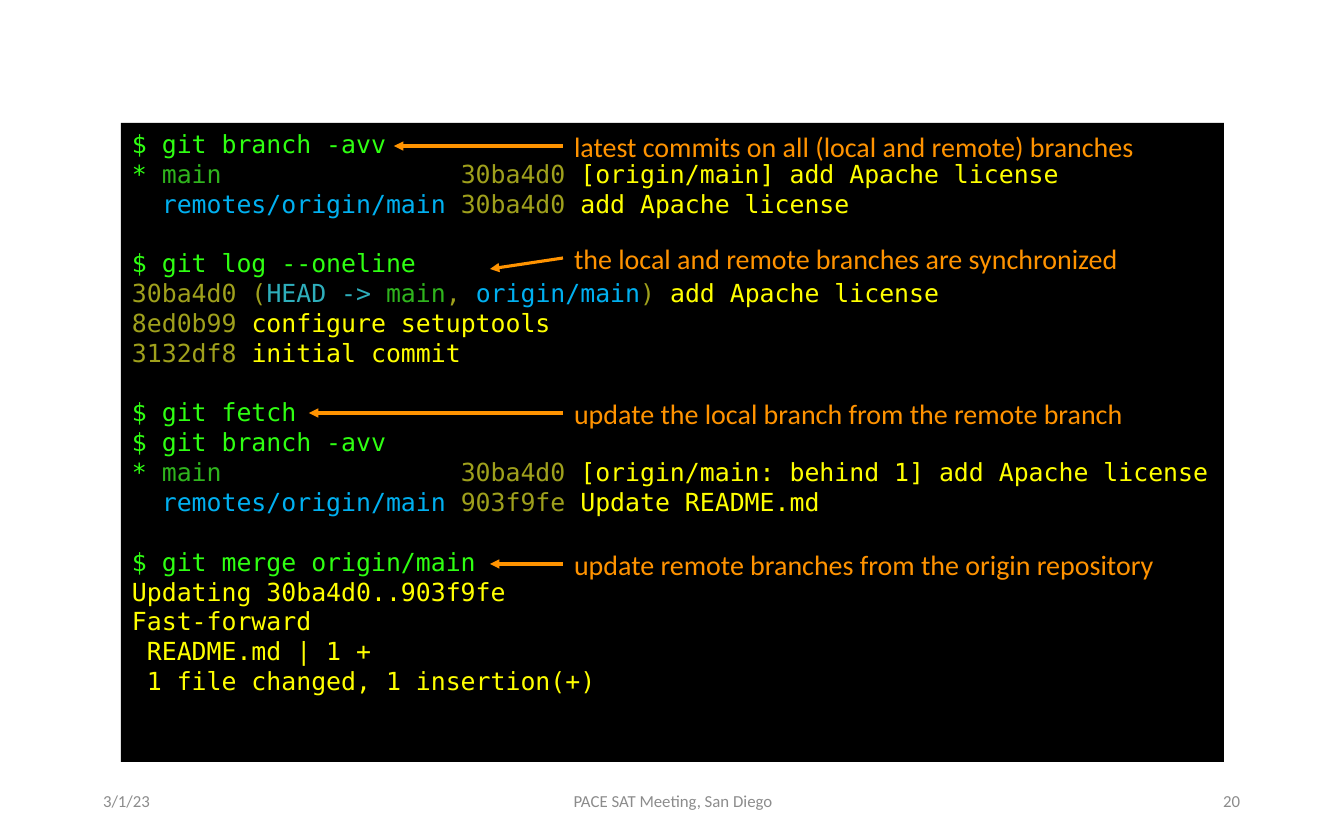
from lxml import etree
from pptx import Presentation
from pptx.dml.color import RGBColor
from pptx.enum.shapes import MSO_CONNECTOR, MSO_SHAPE
from pptx.enum.text import MSO_ANCHOR, PP_ALIGN
from pptx.oxml.ns import qn
from pptx.util import Emu, Pt

RECTANGLE = MSO_SHAPE.RECTANGLE
STRAIGHT = MSO_CONNECTOR.STRAIGHT
TOP, MIDDLE = MSO_ANCHOR.TOP, MSO_ANCHOR.MIDDLE
LEFT, CENTER, RIGHT = PP_ALIGN.LEFT, PP_ALIGN.CENTER, PP_ALIGN.RIGHT

PX_PER_INCH = 112
SANS, MONO = "Calibri", "DejaVu Sans Mono"
BLACK, GRAY, ORANGE = "000000", "8C8C8C", "FF9300"
PROMPT, LOCAL, REMOTE = "2FFF12", "2FB41D", "00B0F0"
HASH, HEAD, OUTPUT = "9FA01C", "2EAEBB", "FFFF00"
CODE_LINE = Pt(19.2)
NAME_WIDTH = 20  # columns of the branch name in a listing


def px(length):
    return Emu(round(length * 914400 / PX_PER_INCH))


def color(value):
    return RGBColor.from_string(value)


def style(font, name, size, value=None):
    font.name = name
    font.size = Pt(size)
    if value:
        font.color.rgb = color(value)


def command(text):
    return [(text, PROMPT)]


def output(text):
    return [(text, OUTPUT)]


def commit(code, message):
    return [(code + " ", HASH), (message, OUTPUT)]


def branches(local_message, remote_code, remote_message):
    return [
        [("* ", PROMPT), ("main".ljust(NAME_WIDTH), LOCAL)]
        + commit("30ba4d0", local_message),
        [("  ", PROMPT), ("remotes/origin/main".ljust(NAME_WIDTH), REMOTE)]
        + commit(remote_code, remote_message),
    ]


# Each group of lines stands one line apart from the one before
SESSION = [
    [command("$ git branch -avv")]
    + branches("[origin/main] add Apache license", "30ba4d0", "add Apache license"),
    [
        command("$ git log --oneline"),
        [("30ba4d0 (", HASH), ("HEAD -> ", HEAD), ("main", LOCAL), (", ", HASH),
         ("origin/main", REMOTE), (") ", HASH), ("add Apache license", OUTPUT)],
        commit("8ed0b99", "configure setuptools"),
        commit("3132df8", "initial commit"),
    ],
    [command("$ git fetch"), command("$ git branch -avv")]
    + branches("[origin/main: behind 1] add Apache license", "903f9fe", "Update README.md"),
    [
        command("$ git merge origin/main"),
        output("Updating 30ba4d0..903f9fe"),
        output("Fast-forward"),
        output(" README.md | 1 +"),
        output(" 1 file changed, 1 insertion(+)"),
    ],
]

# Text, top of the label, x of the arrow tip, drop of the arrow tip
NOTES = [
    ("latest commits on all (local and remote) branches", 124, 394, 0),
    ("the local and remote branches are synchronized", 236, 490, 11),
    ("update the local branch from the remote branch", 391, 309, 0),
    ("update remote branches from the origin repository", 542, 490, 0),
]
NOTE_LEFT, NOTE_WIDTH, LABEL_HEIGHT = 563, 661, 45

# Text, left, width, alignment
FOOTERS = [
    ("3/1/23", 92, 302, LEFT),
    ("PACE SAT Meeting, San Diego", 446, 454, CENTER),
    ("20", 949, 302, RIGHT),
]
FOOTER_TOP = 778


def add_label(page, text, left, top, width, size, value, align=LEFT, anchor=TOP):
    box = page.shapes.add_textbox(px(left), px(top), px(width), px(LABEL_HEIGHT))
    frame = box.text_frame
    frame.word_wrap = True
    frame.vertical_anchor = anchor
    para = frame.paragraphs[0]
    para.text = text
    para.alignment = align
    style(para.font, SANS, size, value)


def add_arrow(page, x1, y1, x2, y2):
    arrow = page.shapes.add_connector(STRAIGHT, px(x1), px(y1), px(x2), px(y2))
    arrow.line.color.rgb = color(ORANGE)
    arrow.line.width = Pt(2)
    line = arrow.line._get_or_add_ln()
    etree.SubElement(line, qn("a:tailEnd"), type="triangle")
    etree.SubElement(arrow._element.spPr, qn("a:effectLst"))


def add_terminal(page, groups):
    box = page.shapes.add_shape(RECTANGLE, px(121), px(123), px(1103), px(639))
    box.shadow.inherit = False
    box.fill.solid()
    box.fill.fore_color.rgb = color(BLACK)
    box.line.fill.background()
    frame = box.text_frame
    frame.word_wrap = True
    frame.vertical_anchor = TOP
    para = None
    for group in groups:
        for index, spans in enumerate(group):
            starts_group = para is not None and index == 0
            para = frame.paragraphs[0] if para is None else frame.add_paragraph()
            para.alignment = LEFT
            para.line_spacing = CODE_LINE
            if starts_group:
                para.space_before = CODE_LINE
            style(para.font, MONO, 16)
            for text, value in spans:
                span = para.add_run()
                span.text = text
                span.font.color.rgb = color(value)


def main():
    deck = Presentation()
    deck.slide_width, deck.slide_height = px(1344), px(840)
    page = deck.slides.add_slide(deck.slide_layouts[6])

    # Footer row
    for text, left, width, align in FOOTERS:
        add_label(page, text, left, FOOTER_TOP, width, 10.8, GRAY, align, MIDDLE)

    # Terminal session
    add_terminal(page, SESSION)

    # Notes with arrows to the commands
    for text, top, tip, drop in NOTES:
        add_label(page, text, NOTE_LEFT, top, NOTE_WIDTH, 18, ORANGE)
        middle = top + LABEL_HEIGHT // 2
        add_arrow(page, NOTE_LEFT, middle, tip, middle + drop)

    deck.save("out.pptx")


if __name__ == "__main__":
    main()
